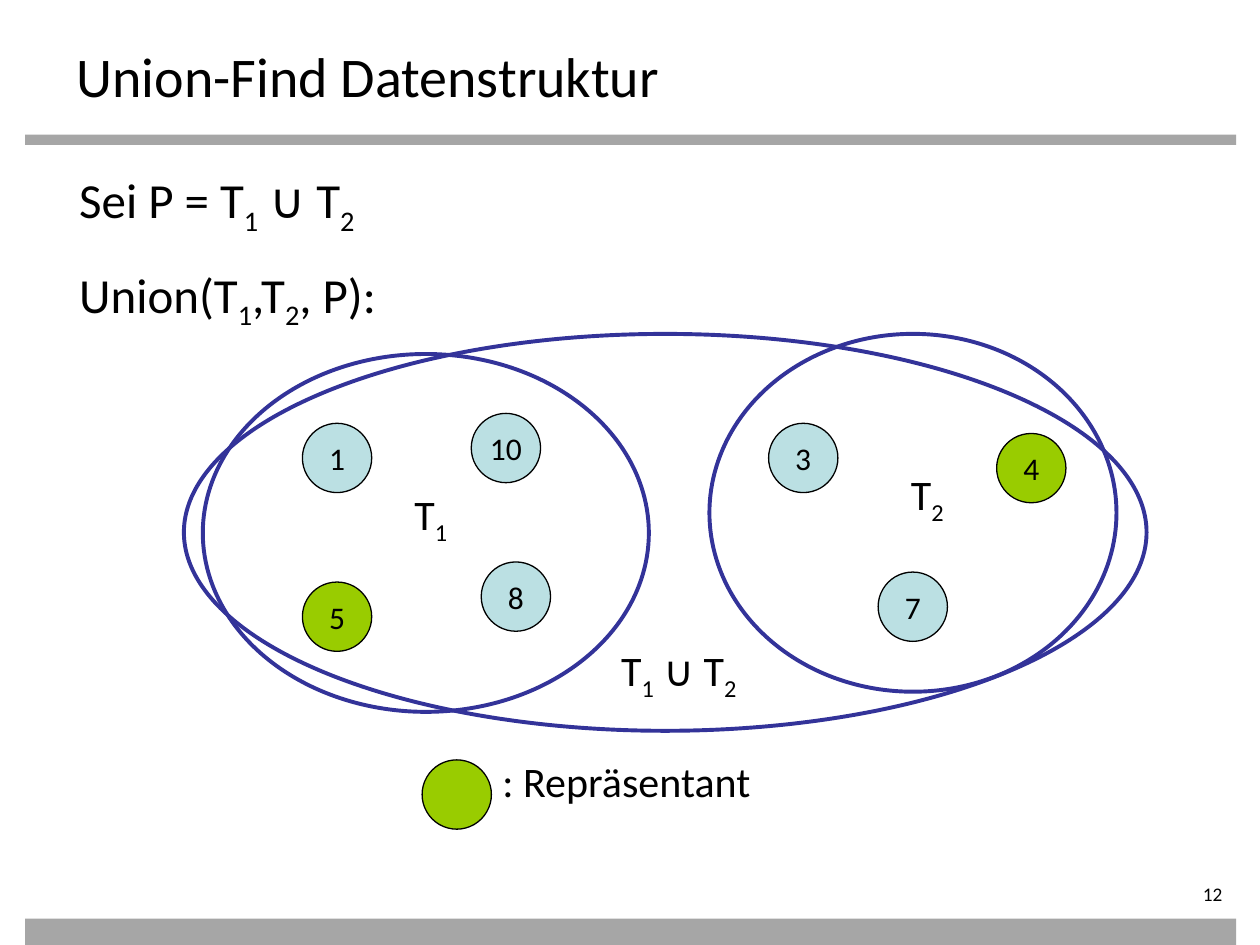
from pptx import Presentation
from pptx import util as u
from pptx.dml.color import RGBColor
from pptx.enum import shapes, text

BLACK = RGBColor(0x00, 0x00, 0x00)
GREY = RGBColor(0xA6, 0xA6, 0xA6)
GREEN = RGBColor(0x99, 0xCC, 0x00)
PALE_BLUE = RGBColor(0xBB, 0xE0, 0xE3)
INDIGO = RGBColor(0x33, 0x33, 0x99)

FONT = "Calibri"
NODE_SIZE = 39.6


def add_runs(paragraph, parts, size):
    for index, part in enumerate(parts):
        run = paragraph.add_run()
        run.text = part
        run.font.name = FONT
        run.font.size = u.Pt(size)
        run.font.color.rgb = BLACK
        if index % 2:
            run._r.get_or_add_rPr().set("baseline", "-25000")


def add_preset(slide, kind, box, fill=None, line=None, weight=0.75):
    shape = slide.shapes.add_shape(kind, *map(u.Pt, box))
    shape.shadow.inherit = False
    if fill is None:
        shape.fill.background()
    else:
        shape.fill.solid()
        shape.fill.fore_color.rgb = fill
    if line is None:
        shape.line.fill.background()
    else:
        shape.line.color.rgb = line
        shape.line.width = u.Pt(weight)
    return shape


def add_bar(slide, top, height):
    add_preset(slide, shapes.MSO_SHAPE.RECTANGLE, (14.4, top, 692, height), GREY)


def add_set(slide, box):
    add_preset(slide, shapes.MSO_SHAPE.OVAL, box, line=INDIGO, weight=2.25)


def add_node(slide, left, top, label="", fill=PALE_BLUE):
    box = (left, top, NODE_SIZE, NODE_SIZE)
    node = add_preset(slide, shapes.MSO_SHAPE.OVAL, box, fill, BLACK)
    if label:
        frame = node.text_frame
        frame.word_wrap = False
        frame.vertical_anchor = text.MSO_ANCHOR.MIDDLE
        frame.paragraphs[0].alignment = text.PP_ALIGN.CENTER
        add_runs(frame.paragraphs[0], [label], 18)


def add_label(slide, box, parts, size):
    frame = slide.shapes.add_textbox(*map(u.Pt, box)).text_frame
    frame.word_wrap = False
    frame.auto_size = text.MSO_AUTO_SIZE.SHAPE_TO_FIT_TEXT
    add_runs(frame.paragraphs[0], parts, size)


def add_title(slide, title):
    frame = slide.shapes.add_textbox(
        u.Pt(36.7), u.Pt(20.2), u.Pt(648), u.Pt(39.6)).text_frame
    frame.word_wrap = True
    add_runs(frame.paragraphs[0], [title], 32)


def add_page_number(slide, number):
    frame = slide.shapes.add_textbox(
        u.Pt(626.4), u.Pt(504), u.Pt(79.2), u.Pt(15.8)).text_frame
    frame.word_wrap = True
    frame.margin_left = frame.margin_top = frame.margin_bottom = 0
    frame.paragraphs[0].alignment = text.PP_ALIGN.RIGHT
    add_runs(frame.paragraphs[0], [number], 11)


def main():
    deck = Presentation()
    deck.slide_width, deck.slide_height = u.Pt(720), u.Pt(540)
    slide = deck.slides.add_slide(deck.slide_layouts[6])

    add_bar(slide, 77, 5.8)
    add_bar(slide, 524.9, 15.1)
    add_title(slide, "Union-Find Datenstruktur")
    add_page_number(slide, "12")

    union = ["T", "1", " ∪ T", "2"]
    add_label(slide, (38.2, 93.6, 177.8, 41), ["Sei P = T"] + union[1:], 28)
    add_label(slide, (38.2, 147.6, 188, 41),
              ["Union(T", "1", ",T", "2", ", P):"], 28)

    for label, left, top in [("1", 172.8, 241.9), ("10", 269.3, 236.2),
                             ("8", 275, 321.1), ("3", 439.2, 241.9),
                             ("7", 501.8, 326.9)]:
        add_node(slide, left, top, label)
    for label, left, top in [("5", 172.8, 332.6), ("4", 569.5, 247.7),
                             ("", 241.2, 434.2)]:
        add_node(slide, left, top, label, GREEN)

    for outline in [(115.9, 202.3, 254.9, 204.5),
                    (405.4, 190.8, 232.6, 204.5),
                    (105.1, 190.8, 550.1, 226.8)]:
        add_set(slide, outline)

    add_label(slide, (229.7, 275.8, 38.2, 36), ["T", "1"], 24)
    add_label(slide, (513.4, 264.2, 38.2, 36), ["T", "2"], 24)
    add_label(slide, (347.8, 365, 82, 36), union, 24)
    add_label(slide, (280, 428.4, 157.7, 36), [": Repräsentant"], 24)

    deck.save("out.pptx")


if __name__ == "__main__":
    main()
